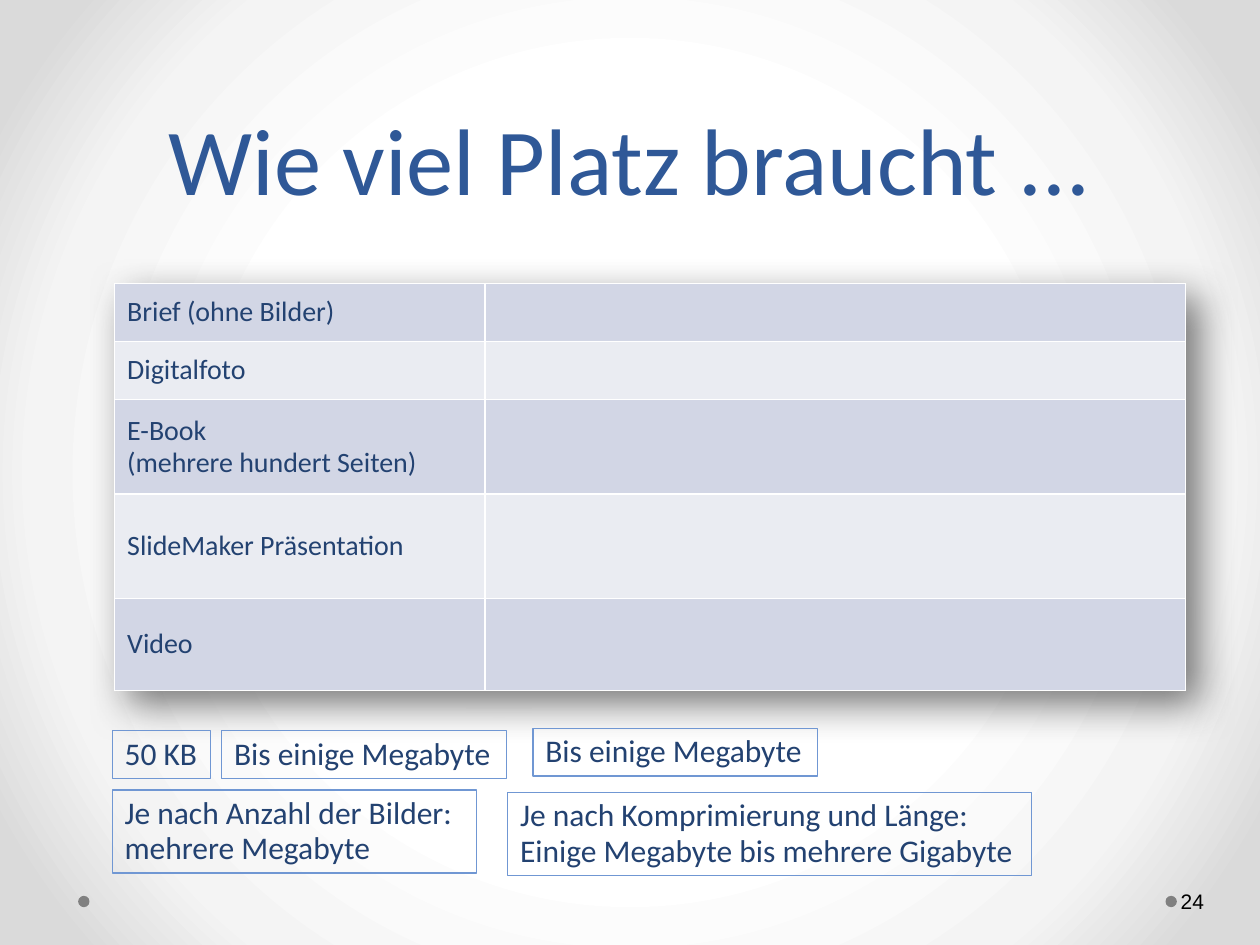
"""Build the slide that asks how much storage common files need."""
from lxml import etree
from pptx import Presentation
from pptx import util as u
from pptx.dml.color import RGBColor
from pptx.enum import shapes, text
from pptx.oxml import parse_xml
from pptx.oxml.ns import nsdecls, qn

TITLE_BLUE = RGBColor(0x2F, 0x58, 0x97)
TEXT_BLUE = RGBColor(0x23, 0x42, 0x71)
LINE_BLUE = RGBColor(0x70, 0x97, 0xD3)
BANDS = RGBColor(0xD2, 0xD6, 0xE5), RGBColor(0xEA, 0xEC, 0xF2)
GREY = RGBColor(0x80, 0x80, 0x80)
BLACK = RGBColor(0, 0, 0)
WHITE = RGBColor(0xFF, 0xFF, 0xFF)
GRADIENT = [(50, WHITE), (76, RGBColor(0xF4, 0xF4, 0xF4)), (92, RGBColor(0xDA, 0xDA, 0xDA))]

WIDTH, HEIGHT = 10, 7.5
TITLE = "Wie viel Platz braucht ..."
PAGE = "24"
COLUMNS = [2.94, 5.56]
ROWS = [
    ("Brief (ohne Bilder)", 0.46),
    ("Digitalfoto", 0.46),
    ("E-Book \n(mehrere hundert Seiten)", 0.75),
    ("SlideMaker Präsentation", 0.83),
    ("Video", 0.73),
]
ONE_LINE, TWO_LINES = 0.38, 0.66
ANSWERS = [
    ("50 KB", 0.89, 5.8, 0.78, ONE_LINE),
    ("Bis einige Megabyte", 1.76, 5.8, 2.26, ONE_LINE),
    ("Je nach Anzahl der Bilder: \nmehrere Megabyte", 0.89, 6.27, 2.89, TWO_LINES),
    ("Je nach Komprimierung und Länge: \nEinige Megabyte bis mehrere Gigabyte",
     4.03, 6.29, 4.16, TWO_LINES),
    ("Bis einige Megabyte", 4.23, 5.78, 2.26, ONE_LINE),
]
DOT, DOT_TOP, DOT_LEFTS = 0.09, 7.11, (0.62, 9.25)


def inches(*lengths):
    return [u.Inches(n) for n in lengths]


def write(tf, content, size, color, font="Calibri", spacing=None):
    p = tf.paragraphs[0]
    p.text = content
    p.line_spacing = spacing
    for r in p.runs:
        r.font.size, r.font.name = u.Pt(size), font
        r.font.color.rgb = color
    return p


def set_background(s):
    stops = "".join(f'<a:gs pos="{pos * 1000}"><a:srgbClr val="{color}"/></a:gs>'
                    for pos, color in GRADIENT)
    s.element.cSld.insert(0, parse_xml(
        f'<p:bg {nsdecls("p", "a")}><p:bgPr><a:gradFill rotWithShape="1">'
        f'<a:gsLst>{stops}</a:gsLst><a:path path="circle">'
        '<a:fillToRect l="50000" t="50000" r="50000" b="50000"/></a:path>'
        '</a:gradFill><a:effectLst/></p:bgPr></p:bg>'))


def add_borders(cell):
    tc_pr = cell._tc.get_or_add_tcPr()
    for i, side in enumerate(("lnL", "lnR", "lnT", "lnB")):
        ln = etree.Element(qn(f"a:{side}"), w=str(u.Pt(1)))
        fill = etree.SubElement(ln, qn("a:solidFill"))
        etree.SubElement(fill, qn("a:srgbClr"), val=str(WHITE))
        tc_pr.insert(i, ln)


def add_sizes_table(s):
    heights = [height for _, height in ROWS]
    frame = s.shapes.add_table(len(ROWS), len(COLUMNS),
                               *inches(0.91, 2.25, sum(COLUMNS), sum(heights)))
    table = frame.table
    table.first_row = False
    table._tbl.tblPr.insert(0, parse_xml(
        f'<a:effectLst {nsdecls("a")}><a:outerShdw blurRad="292100" dist="139700" '
        'dir="2700000" algn="tl" rotWithShape="0"><a:srgbClr val="333333">'
        '<a:alpha val="65000"/></a:srgbClr></a:outerShdw></a:effectLst>'))
    for column, width in zip(table.columns, COLUMNS):
        column.width = u.Inches(width)
    for i, (label, height) in enumerate(ROWS):
        table.rows[i].height = u.Inches(height)
        for cell in table.rows[i].cells:
            cell.fill.solid()
            cell.fill.fore_color.rgb = BANDS[i % 2]
            cell.vertical_anchor = text.MSO_ANCHOR.MIDDLE
            add_borders(cell)
        write(table.cell(i, 0).text_frame, label, 16, TEXT_BLUE, spacing=0.93)


def main():
    prs = Presentation()
    prs.slide_width, prs.slide_height = inches(WIDTH, HEIGHT)
    s = prs.slides.add_slide(prs.slide_layouts[5])
    set_background(s)

    title = s.shapes.title
    title.left, title.top, title.width, title.height = inches(0.5, 0, 9, 1.75)
    tf = title.text_frame
    tf.auto_size = text.MSO_AUTO_SIZE.NONE
    tf.vertical_anchor = text.MSO_ANCHOR.BOTTOM
    write(tf, TITLE, 54, TITLE_BLUE).alignment = text.PP_ALIGN.CENTER

    for left in DOT_LEFTS:
        dot = s.shapes.add_shape(shapes.MSO_SHAPE.OVAL, *inches(left, DOT_TOP, DOT, DOT))
        dot.shadow.inherit = False
        dot.fill.solid()
        dot.fill.fore_color.rgb = GREY
        dot.line.fill.background()

    tf = s.shapes.add_textbox(*inches(9.34, 6.95, 0.61, 0.4)).text_frame
    tf.word_wrap = True
    tf.margin_left, tf.margin_right = inches(0.03, 0.05)
    tf.vertical_anchor = text.MSO_ANCHOR.MIDDLE
    write(tf, PAGE, 12, BLACK, "Arial")

    add_sizes_table(s)

    for answer, *box in ANSWERS:
        sp = s.shapes.add_textbox(*inches(*box))
        sp.line.color.rgb = LINE_BLUE
        sp.line.width = u.Pt(0.75)
        sp.text_frame.word_wrap = False
        sp.text_frame.auto_size = text.MSO_AUTO_SIZE.SHAPE_TO_FIT_TEXT
        write(sp.text_frame, answer, 18, TEXT_BLUE, spacing=0.93)

    prs.save("out.pptx")


if __name__ == "__main__":
    main()
